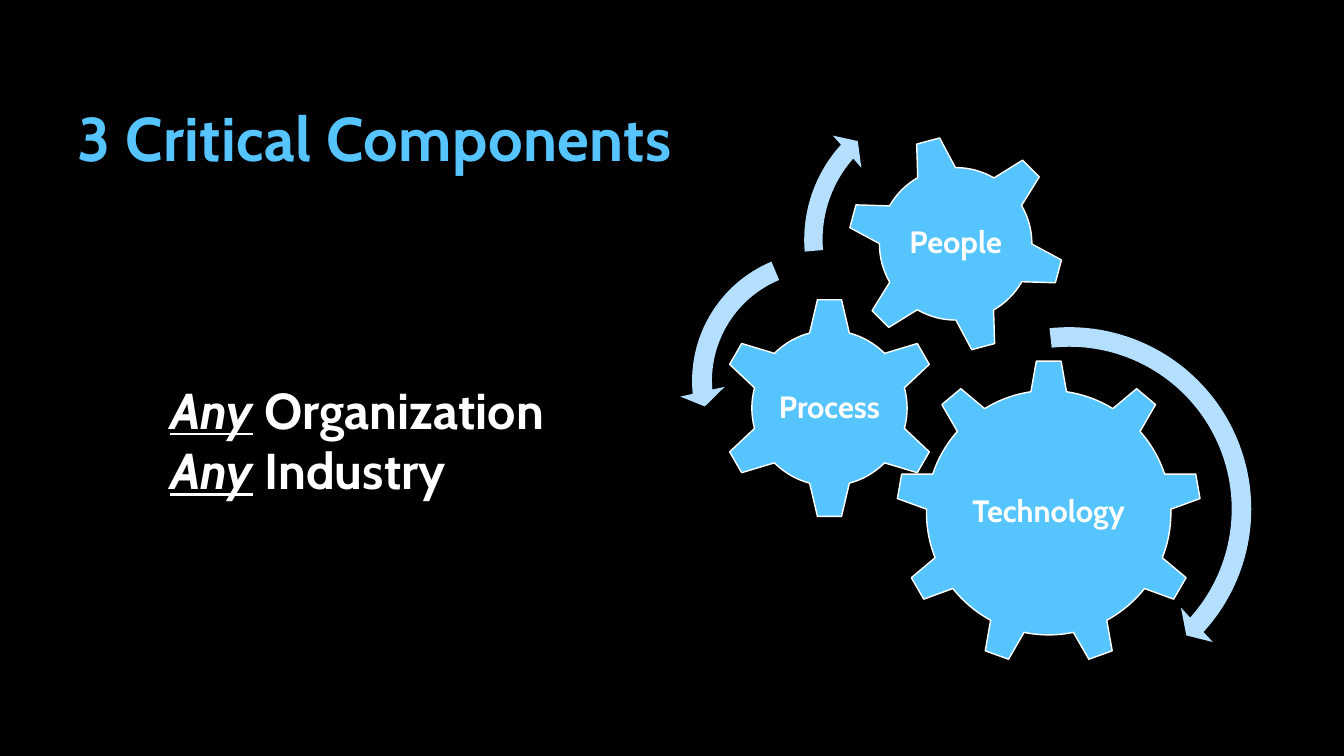
from dataclasses import dataclass

from pptx import Presentation
from pptx.dml.color import RGBColor as Rgb
from pptx.enum.shapes import MSO_SHAPE as Shape
from pptx.enum.text import MSO_ANCHOR as Anchor, PP_ALIGN as Align
from pptx.util import Cm, Pt


@dataclass(frozen=True)
class Theme:
    """Colours, typeface and type sizes of the slide."""

    background: Rgb = Rgb.from_string("000000")
    accent: Rgb = Rgb.from_string("56C5FF")
    pale: Rgb = Rgb.from_string("B4DFFF")
    light: Rgb = Rgb.from_string("FFFFFF")
    typeface: str = "Cabin"
    title_size: int = 44
    body_size: int = 36
    label_size: int = 22


class GearSlide:
    """Draws titles, statements, gears and arrows on one page."""

    def __init__(self, page, theme):
        """Keep the page and theme, and paint the background."""
        self.page = page
        self.theme = theme
        fill = page.background.fill
        fill.solid()
        fill.fore_color.rgb = theme.background
        self.diagram = page.shapes.add_group_shape()

    def style(self, para, size, color):
        """Give a paragraph the bold typeface of the theme."""
        font = para.font
        font.name = self.theme.typeface
        font.size = Pt(size)
        font.bold = True
        font.color.rgb = color

    def text_frame(self, shapes, left, top, width, height, anchor):
        """Add a wrapping text box, measured in centimetres."""
        box = shapes.add_textbox(Cm(left), Cm(top), Cm(width), Cm(height))
        frame = box.text_frame
        frame.word_wrap = True
        frame.vertical_anchor = anchor
        return frame

    def title(self, text, left, top, width, height):
        """Add the slide heading."""
        frame = self.text_frame(self.page.shapes, left, top, width, height, Anchor.BOTTOM)
        para = frame.paragraphs[0]
        para.line_spacing = 0.9
        self.style(para, self.theme.title_size, self.theme.accent)
        span = para.add_run()
        span.text = text
        span._r.get_or_add_rPr().set("spc", "30")

    def statements(self, lines, left, top, width, height):
        """Add lines that each open with an emphasised word."""
        frame = self.text_frame(self.page.shapes, left, top, width, height, Anchor.TOP)
        for index, (stress, rest) in enumerate(lines):
            para = frame.add_paragraph() if index else frame.paragraphs[0]
            self.style(para, self.theme.body_size, self.theme.light)
            span = para.add_run()
            span.text = stress
            span.font.italic = True
            span.font.underline = True
            para.add_run().text = f" {rest}"

    def solid(self, kind, left, top, size, color):
        """Add a square preset shape with a plain fill."""
        shape = self.diagram.shapes.add_shape(kind, Cm(left), Cm(top), Cm(size), Cm(size))
        shape.shadow.inherit = False
        shape.fill.solid()
        shape.fill.fore_color.rgb = color
        return shape

    def gear(self, text, kind, left, top, size, rotation=0):
        """Add a gear with an upright label at its centre."""
        gear = self.solid(kind, left, top, size, self.theme.accent)
        gear.rotation = rotation
        gear.line.color.rgb = self.theme.light
        gear.line.width = Pt(1)
        inset, side = 0.2 * size, 0.6 * size
        frame = self.text_frame(
            self.diagram.shapes, left + inset, top + inset, side, side, Anchor.MIDDLE
        )
        frame.margin_left = frame.margin_right = Cm(0.08)
        frame.margin_top = frame.margin_bottom = Cm(0.08)
        para = frame.paragraphs[0]
        para.alignment = Align.CENTER
        para.line_spacing = 0.9
        self.style(para, self.theme.label_size, self.theme.light)
        para.add_run().text = text

    def arrow(self, kind, left, top, size, adjustments):
        """Add a curved arrow showing how a gear turns."""
        arrow = self.solid(kind, left, top, size, self.theme.pale)
        arrow.line.fill.background()
        for index, value in enumerate(adjustments):
            arrow.adjustments[index] = value


def main():
    """Build the slide and save it."""
    deck = Presentation()
    deck.slide_width, deck.slide_height = Cm(33.87), Cm(19.05)
    slide = GearSlide(deck.slides.add_slide(deck.slide_layouts[6]), Theme())
    slide.title("3 Critical Components", 1.7, 1.78, 18.11, 2.74)
    slide.gear("Technology", Shape.GEAR_9, 22.58, 9.07, 7.7)
    slide.gear("Process", Shape.GEAR_6, 18.11, 7.49, 5.59)
    slide.gear("People", Shape.GEAR_6, 21.34, 3.4, 5.49, rotation=345)
    clockwise, counter = Shape.CIRCULAR_ARROW, Shape.LEFT_CIRCULAR_ARROW
    slide.arrow(clockwise, 22.02, 7.9, 9.86, (0.05, 2.99, 25.33, 158.25, 0.06))
    slide.arrow(counter, 17.12, 6.02, 7.16, (0.07, 4.3, 104.89, 148.38, 0.08))
    slide.arrow(clockwise, 19.96, 2.18, 7.72, (0.06, 3.94, 133.14, 105.08, 0.07))
    lines = [("Any", "Organization"), ("Any", "Industry")]
    slide.statements(lines, 4.04, 9.42, 11.13, 3.36)
    deck.save("out.pptx")


if __name__ == "__main__":
    main()
